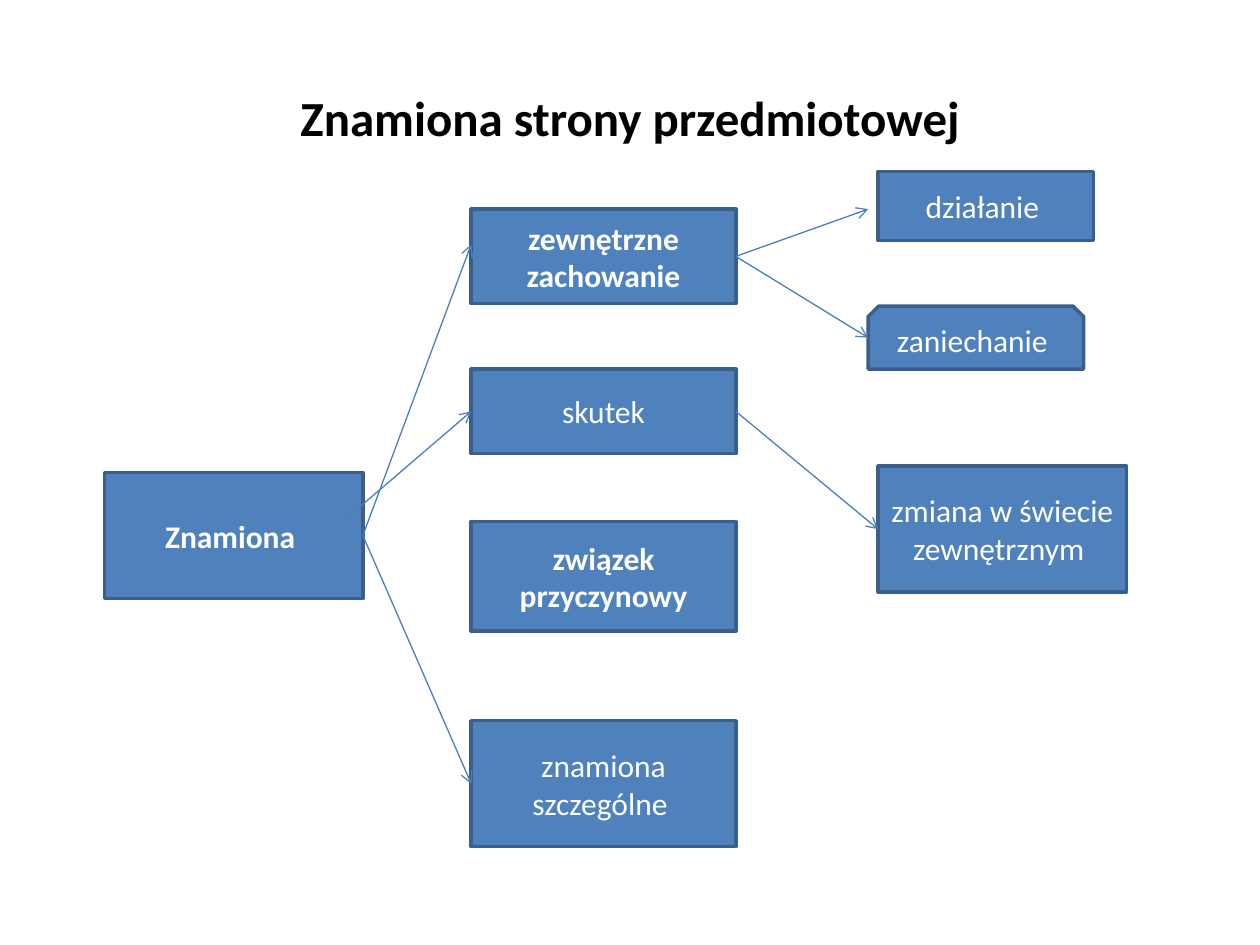
from lxml.etree import SubElement
from pptx import Presentation
from pptx.dml.color import RGBColor
from pptx.enum.shapes import MSO_CONNECTOR, MSO_SHAPE
from pptx.enum.text import MSO_ANCHOR, PP_ALIGN
from pptx.oxml.ns import qn
from pptx.util import Inches, Pt

COLORS = {"box": "4F81BD", "border": "3A5F8C", "arrow": "4B7EBC",
          "title": "000000", "label": "FFFFFF"}
MIDDLE_X, MIDDLE_W = 3.74, 2.1
RIGHT_X = 6.97
LEFT_SIDE, RIGHT_SIDE = 1, 3


def rgb(name):
    return RGBColor.from_string(COLORS[name])


def write_text(tf, text, size=18, bold=False, color="label"):
    tf.word_wrap = True
    tf.vertical_anchor = MSO_ANCHOR.MIDDLE
    p = tf.paragraphs[0]
    p.alignment = PP_ALIGN.CENTER
    r = p.add_run()
    r.text = text
    r.font.name = "Calibri"
    r.font.size = Pt(size)
    r.font.bold = bold
    r.font.color.rgb = rgb(color)


def add_title(s, text):
    title = s.shapes.title
    title.left, title.top = Inches(0.5), Inches(0.3)
    title.width, title.height = Inches(9), Inches(1.25)
    write_text(title.text_frame, text, size=28, bold=True, color="title")


def add_box(s, text, x, y, w, h, bold=False, kind=MSO_SHAPE.RECTANGLE):
    sp = s.shapes.add_shape(kind, Inches(x), Inches(y), Inches(w), Inches(h))
    sp.shadow.inherit = False
    sp.fill.solid()
    sp.fill.fore_color.rgb = rgb("box")
    sp.line.color.rgb = rgb("border")
    sp.line.width = Pt(2)
    write_text(sp.text_frame, text, bold=bold)
    return sp


def add_arrow(s, start, end):
    points = [(0, 0) if hasattr(e, "shape_id") else e for e in (start, end)]
    (x1, y1), (x2, y2) = points
    cn = s.shapes.add_connector(MSO_CONNECTOR.STRAIGHT, Inches(x1), Inches(y1),
                                Inches(x2), Inches(y2))
    if hasattr(start, "shape_id"):
        cn.begin_connect(start, RIGHT_SIDE)
    if hasattr(end, "shape_id"):
        cn.end_connect(end, LEFT_SIDE)
    cn.line.color.rgb = rgb("arrow")
    cn.line.width = Pt(0.75)
    SubElement(cn.line._get_or_add_ln(), qn("a:tailEnd"), type="arrow")
    SubElement(cn._element.spPr, qn("a:effectLst"))


def main():
    prs = Presentation()
    prs.slide_width, prs.slide_height = Inches(10), Inches(7.5)
    s = prs.slides.add_slide(prs.slide_layouts[5])
    add_title(s, "Znamiona strony przedmiotowej")

    root = add_box(s, "Znamiona ", 0.83, 3.75, 2.05, 1, bold=True)
    behaviour, effect, _, special = [
        add_box(s, text, MIDDLE_X, y, MIDDLE_W, h, bold=bold)
        for text, y, h, bold in [
            ("zewnętrzne zachowanie", 1.66, 0.75, True),
            ("skutek", 2.93, 0.67, False),
            ("związek przyczynowy", 4.14, 0.87, True),
            ("znamiona szczególne ", 5.72, 1, False),
        ]
    ]
    add_box(s, "działanie ", RIGHT_X, 1.36, 1.71, 0.55)
    add_box(s, "zaniechanie ", 6.89, 2.43, 1.71, 0.5,
            kind=MSO_SHAPE.SNIP_2_SAME_RECTANGLE)
    change = add_box(s, "zmiana w świecie zewnętrznym ", RIGHT_X, 3.7, 1.97, 1)

    for start, end in [
        (root, (MIDDLE_X, 1.94)),
        ((2.72, 4.14), effect),
        (root, special),
        (behaviour, (6.89, 1.66)),
        (behaviour, (6.89, 2.68)),
        (effect, change),
    ]:
        add_arrow(s, start, end)

    prs.save("out.pptx")


if __name__ == "__main__":
    main()
